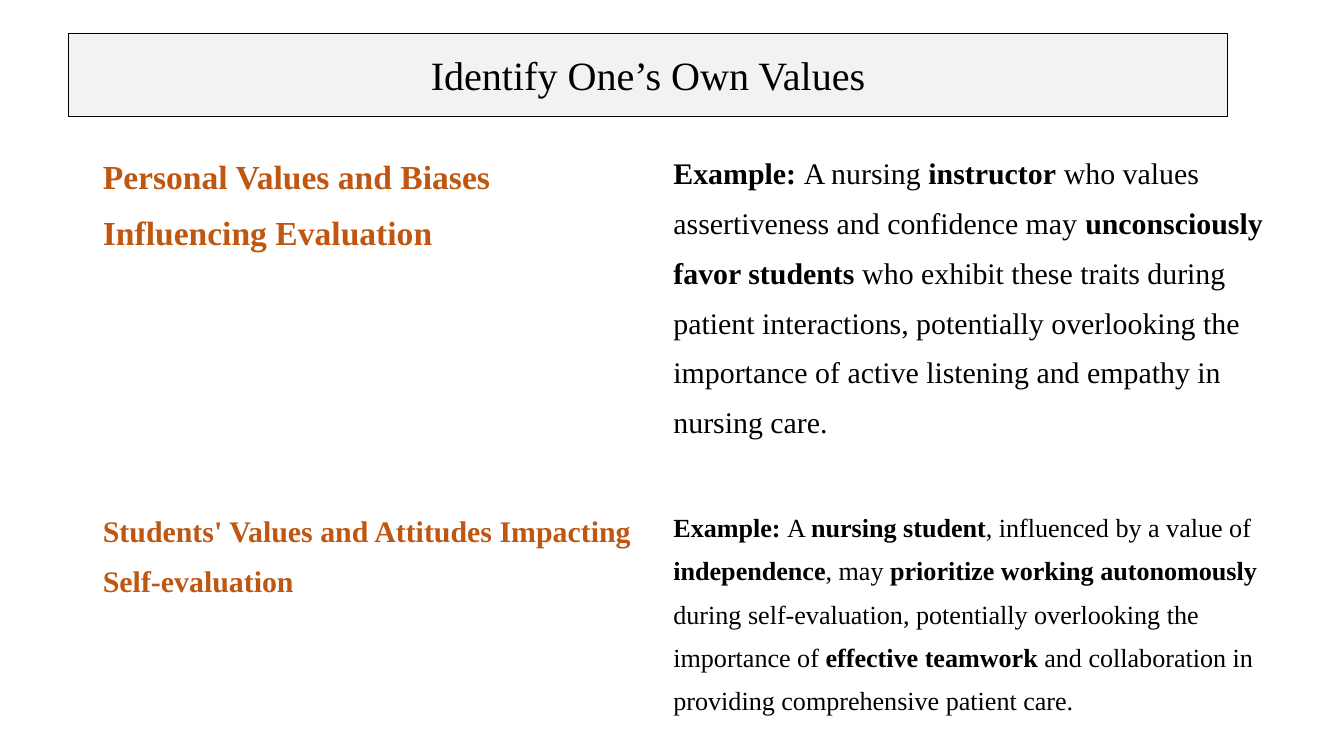
from pptx import Presentation
from pptx import util as u
from pptx.dml.color import RGBColor
from pptx.enum import shapes, text

FONT = "Times New Roman"
BLACK = RGBColor(0x00, 0x00, 0x00)
WHITE = RGBColor(0xFF, 0xFF, 0xFF)
GREY = RGBColor(0xF2, 0xF2, 0xF2)
RUST = RGBColor(0xBF, 0x57, 0x11)

# Each cell: size, colour, runs of (wording, bold)
ROWS = [
    [
        (36, RUST, [("Personal Values and Biases Influencing Evaluation", True)]),
        (32, BLACK, [
            ("Example: ", True),
            ("A nursing ", False),
            ("instructor", True),
            (" who values assertiveness and confidence may ", False),
            ("unconsciously favor students ", True),
            ("who exhibit these traits during patient interactions, potentially "
             "overlooking the importance of active listening and empathy in "
             "nursing care.", False),
        ]),
    ],
    [
        (32, RUST, [("Students' Values and Attitudes Impacting Self-evaluation", True)]),
        (28, BLACK, [
            ("Example: ", True),
            ("A ", False),
            ("nursing student", True),
            (", influenced by a value of ", False),
            ("independence", True),
            (", may ", False),
            ("prioritize working autonomously ", True),
            ("during self-evaluation, potentially overlooking the importance of ", False),
            ("effective teamwork ", True),
            ("and collaboration in providing comprehensive patient care.", False),
        ]),
    ],
]


def add_runs(para, size, colour, runs):
    for wording, bold in runs:
        span = para.add_run()
        span.text = wording
        span.font.name = FONT
        span.font.size = u.Pt(size)
        span.font.bold = bold
        span.font.color.rgb = colour


def add_title(page, left, top, width, height):
    box = page.shapes.add_shape(shapes.MSO_SHAPE.RECTANGLE, u.Pt(left), u.Pt(top),
                                u.Pt(width), u.Pt(height))
    box.shadow.inherit = False
    box.fill.solid()
    box.fill.fore_color.rgb = GREY
    box.line.color.rgb = BLACK
    box.line.width = u.Pt(0.75)
    frame = box.text_frame
    frame.word_wrap = True
    frame.vertical_anchor = text.MSO_ANCHOR.MIDDLE
    para = frame.paragraphs[0]
    para.alignment = text.PP_ALIGN.CENTER
    add_runs(para, 43, BLACK, [("Identify One’s Own Values", False)])


def add_values_table(page, left, top, column_widths, row_heights):
    table = page.shapes.add_table(
        len(row_heights), len(column_widths), u.Pt(left), u.Pt(top),
        u.Pt(sum(column_widths)), u.Pt(sum(row_heights))).table
    table.first_row = table.horz_banding = False
    for column, width in zip(table.columns, column_widths):
        column.width = u.Pt(width)
    for row, height, contents in zip(table.rows, row_heights, ROWS):
        row.height = u.Pt(height)
        for cell, content in zip(row.cells, contents):
            cell.fill.solid()
            cell.fill.fore_color.rgb = WHITE
            cell.margin_left = cell.margin_right = u.Pt(10.8)
            cell.margin_top = cell.margin_bottom = u.Pt(5.4)
            para = cell.text_frame.paragraphs[0]
            para.line_spacing = 1.5
            add_runs(para, *content)


def main():
    deck = Presentation()
    deck.slide_width, deck.slide_height = u.Pt(1440), u.Pt(810)
    page = deck.slides.add_slide(deck.slide_layouts[6])
    # Values and examples, side by side
    add_values_table(page, 99.4, 146.2, [611.3, 704.9], [383.8, 243.4])
    # Title bar
    add_title(page, 73.4, 35.3, 1242, 89.3)
    deck.save("out.pptx")


if __name__ == "__main__":
    main()
